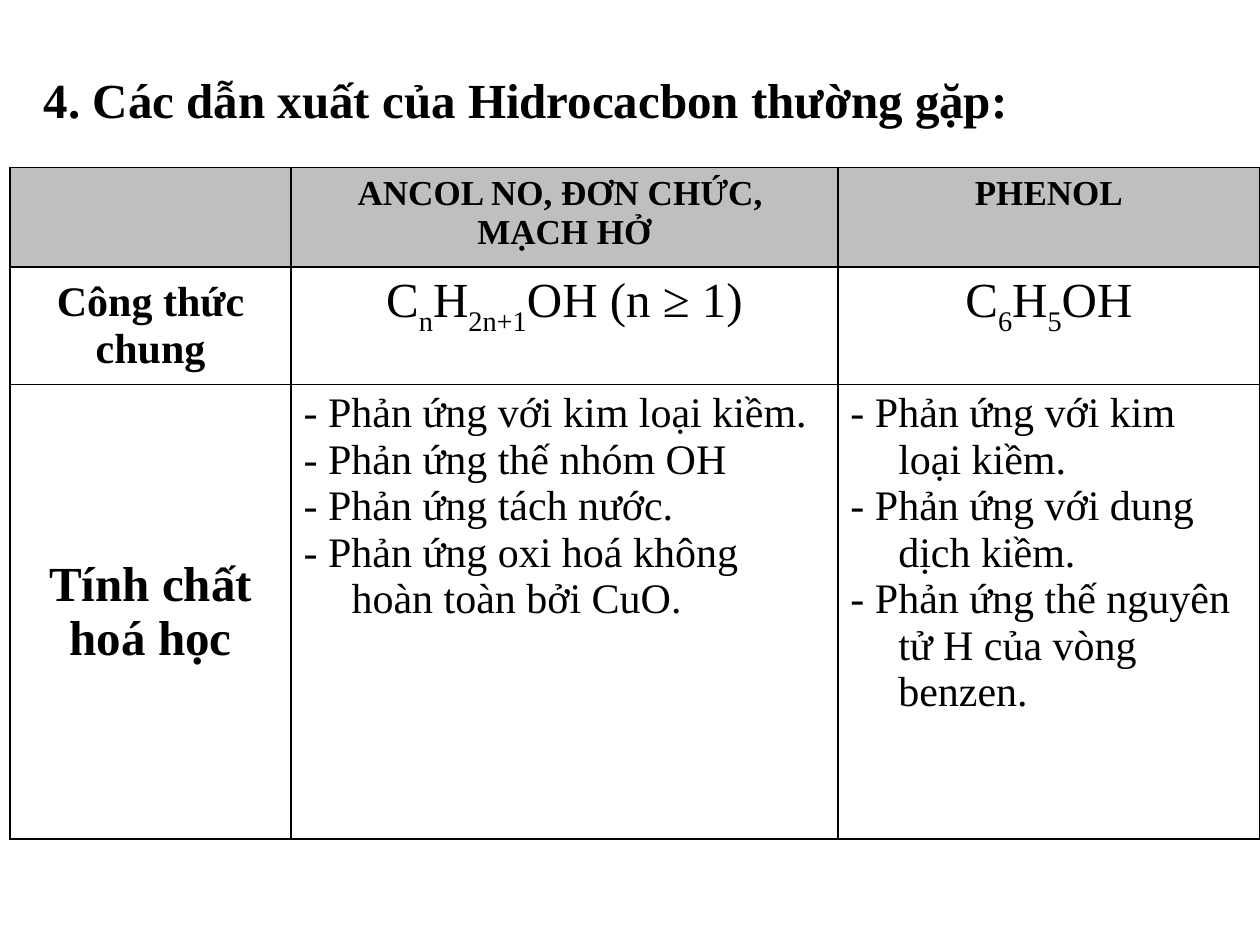
from lxml import etree
from pptx import Presentation
from pptx.dml.color import RGBColor
from pptx.enum.text import MSO_ANCHOR, MSO_AUTO_SIZE, PP_ALIGN
from pptx.oxml.ns import qn
from pptx.util import Inches, Pt

BLACK = RGBColor(0x00, 0x00, 0x00)
GRAY = RGBColor(0xBF, 0xBF, 0xBF)
LEFT, CENTER = PP_ALIGN.LEFT, PP_ALIGN.CENTER
TOP, MIDDLE = MSO_ANCHOR.TOP, MSO_ANCHOR.MIDDLE
GROW = MSO_AUTO_SIZE.SHAPE_TO_FIT_TEXT

COLS = [2.23, 4.34, 3.35]
ROWS = [0.79, 0.93, 3.61]


class Painter:
    font = "Times New Roman"
    color = BLACK
    hang = Inches(0.38)

    def __init__(self, slide):
        self.slide = slide

    def text(self, frame, lines, size, bold=False, align=LEFT, hang=False):
        """Fill a frame; each line is a tuple of runs, every second one subscript."""
        for i, line in enumerate(lines):
            para = frame.paragraphs[0] if i == 0 else frame.add_paragraph()
            para.alignment = align
            if hang:
                props = para._p.get_or_add_pPr()
                props.set("marL", str(self.hang))
                props.set("indent", str(-self.hang))
            for j, words in enumerate(line):
                run = para.add_run()
                run.text = words
                run.font.name = self.font
                run.font.size = Pt(size)
                run.font.bold = bold
                run.font.color.rgb = self.color
                if j % 2:
                    run._r.get_or_add_rPr().set("baseline", "-30000")

    def title(self, words, left, top, width, height):
        box = self.slide.shapes.add_textbox(
            Inches(left), Inches(top), Inches(width), Inches(height))
        box.text_frame.word_wrap = True
        box.text_frame.auto_size = GROW
        self.text(box.text_frame, [(words,)], 28, bold=True)

    def grid(self, left, top, cols, rows):
        table = self.slide.shapes.add_table(
            len(rows), len(cols), Inches(left), Inches(top),
            Inches(sum(cols)), Inches(sum(rows))).table
        table.first_row = table.horz_banding = False
        for col, width in zip(table.columns, cols):
            col.width = Inches(width)
        for row, height in zip(table.rows, rows):
            row.height = Inches(height)
        return table

    def cell(self, cell, lines, size, fill=None, anchor=TOP, **style):
        cell.vertical_anchor = anchor
        self.text(cell.text_frame, lines, size, **style)
        self.border(cell)
        if fill is None:
            cell.fill.background()
        else:
            cell.fill.solid()
            cell.fill.fore_color.rgb = fill

    def border(self, cell):
        props = cell._tc.get_or_add_tcPr()
        for side in ("a:lnL", "a:lnR", "a:lnT", "a:lnB"):
            line = etree.SubElement(props, qn(side), w=str(Pt(1)))
            fill = etree.SubElement(line, qn("a:solidFill"))
            etree.SubElement(fill, qn("a:srgbClr"), val=str(self.color))


def main():
    deck = Presentation()
    deck.slide_width, deck.slide_height = Inches(10), Inches(7.5)
    art = Painter(deck.slides.add_slide(deck.slide_layouts[6]))

    head = dict(size=20, bold=True, align=CENTER, hang=True, fill=GRAY)
    label = dict(bold=True, align=CENTER, anchor=MIDDLE)
    formula = dict(size=28, align=CENTER, hang=True)
    facts = dict(size=24, hang=True)
    cells = [
        [([], head),
         ([("ANCOL NO, ĐƠN CHỨC, ",), ("MẠCH HỞ",)], head),
         ([("PHENOL",)], head)],
        [([("Công thức chung",)], dict(label, size=24)),
         ([("C", "n", "H", "2n+1", "OH (n ≥ 1)")], formula),
         ([("C", "6", "H", "5", "OH")], formula)],
        [([("Tính chất hoá học",)], dict(label, size=28)),
         ([("- Phản ứng với kim loại kiềm.",),
           ("- Phản ứng thế nhóm OH",),
           ("- Phản ứng tách nước.",),
           ("- Phản ứng oxi hoá không hoàn toàn bởi CuO.",)], facts),
         ([("- Phản ứng với kim loại kiềm.",),
           ("- Phản ứng với dung dịch kiềm.",),
           ("- Phản ứng thế nguyên tử H của vòng benzen.",)], facts)],
    ]
    table = art.grid(0.08, 1.33, COLS, ROWS)
    for r, row in enumerate(cells):
        for c, (lines, style) in enumerate(row):
            art.cell(table.cell(r, c), lines, **style)

    art.title("4. Các dẫn xuất của Hidrocacbon thường gặp:",
              0.25, 0.5, 8.92, 0.57)
    deck.save("out.pptx")


if __name__ == "__main__":
    main()
